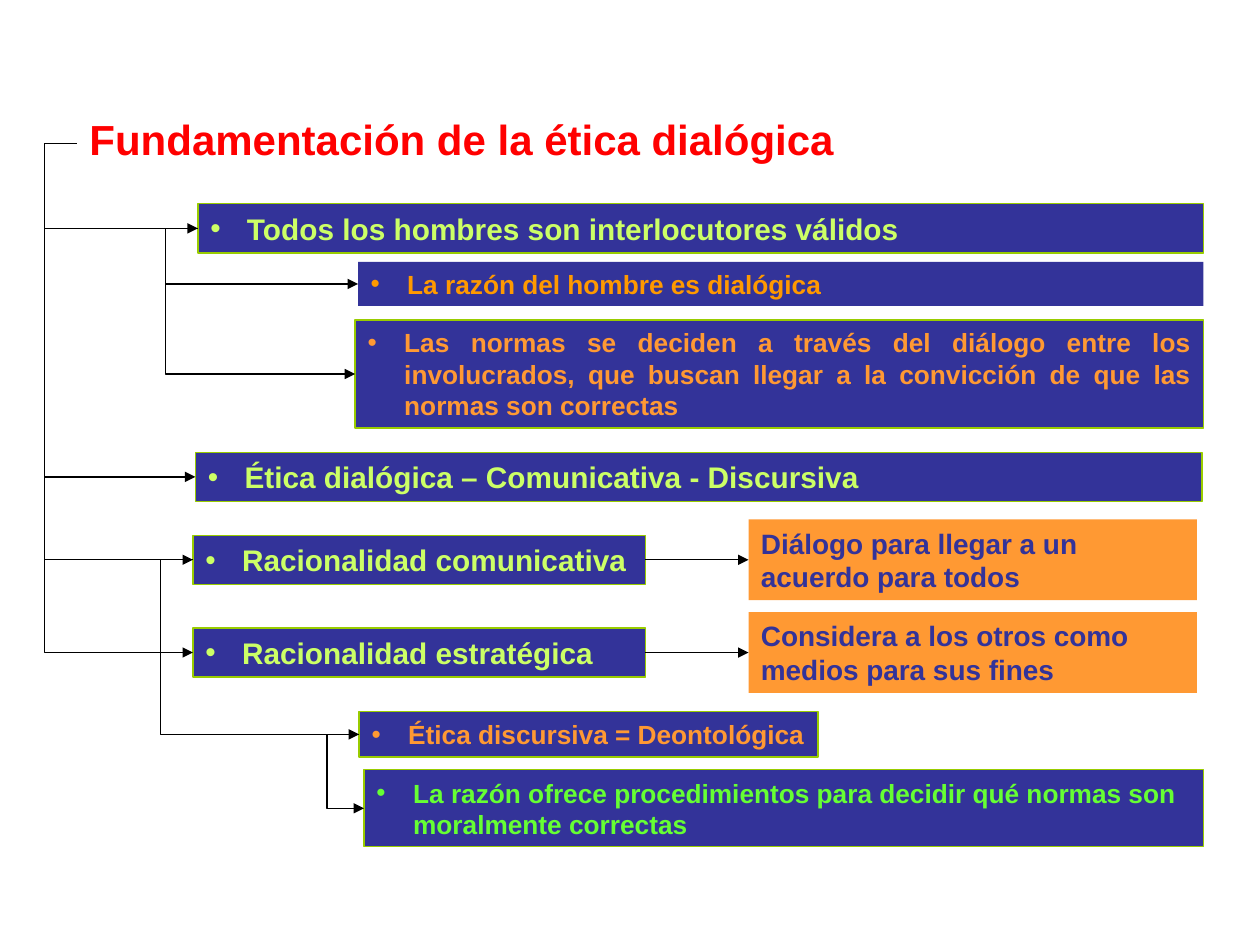
import pptx
import pptx.dml.color
import pptx.enum.shapes
import pptx.enum.text
import pptx.oxml.ns
import pptx.util
from lxml import etree

Cm = pptx.util.Cm
Pt = pptx.util.Pt
Align = pptx.enum.text.PP_ALIGN
Connector = pptx.enum.shapes.MSO_CONNECTOR
qn = pptx.oxml.ns.qn

COLORS = {
    "title": "FF0000",
    "navy": "333399",
    "border": "99CC00",
    "lime": "CCFF66",
    "orange": "FF9933",
    "amber": "FF9900",
    "green": "66FF33",
    "black": "000000",
}
BRANCH_GAP = Cm(0.65)
BULLET_INDENT = Cm(0.74)
MAIN_HEIGHT = 0.99


def rgb(name):
    return pptx.dml.color.RGBColor.from_string(COLORS[name])


def write_text(shape, text, size, color, align=Align.LEFT):
    frame = shape.text_frame
    frame.word_wrap = True
    frame.auto_size = pptx.enum.text.MSO_AUTO_SIZE.NONE
    frame.vertical_anchor = pptx.enum.text.MSO_ANCHOR.MIDDLE
    paragraph = frame.paragraphs[0]
    paragraph.alignment = align
    run = paragraph.add_run()
    run.text = text
    run.font.name = "Arial"
    run.font.size = Pt(size)
    run.font.bold = True
    run.font.color.rgb = rgb(color)
    return paragraph


def add_bullet(paragraph):
    properties = paragraph._p.get_or_add_pPr()
    properties.set("marL", str(BULLET_INDENT))
    properties.set("indent", str(-BULLET_INDENT))
    etree.SubElement(properties, qn("a:buFont")).set("typeface", "Arial")
    etree.SubElement(properties, qn("a:buChar")).set("char", "•")


def add_box(slide, box, text, size, color, fill="navy", border=True,
            bullet=True, align=Align.LEFT):
    shape = slide.shapes.add_shape(
        pptx.enum.shapes.MSO_SHAPE.RECTANGLE, *(Cm(length) for length in box))
    shape.shadow.inherit = False
    shape.fill.solid()
    shape.fill.fore_color.rgb = rgb(fill)
    if border:
        shape.line.color.rgb = rgb("border")
        shape.line.width = Pt(0.75)
    else:
        shape.line.fill.background()
    paragraph = write_text(shape, text, size, color, align)
    if bullet:
        add_bullet(paragraph)
    return shape


def middle(shape):
    return shape.top + shape.height // 2


def add_arrow(slide, kind, start, end):
    connector = slide.shapes.add_connector(kind, *start, *end)
    connector.line.color.rgb = rgb("black")
    connector.line.width = Pt(0.75)
    line = connector.line._get_or_add_ln()
    etree.SubElement(line, qn("a:tailEnd")).set("type", "triangle")
    etree.SubElement(connector._element.spPr, qn("a:effectLst"))
    return connector


def add_branch(slide, parent, child):
    connector = add_arrow(slide, Connector.ELBOW,
                          (parent.left, middle(parent)), (child.left, middle(child)))
    ratio = -BRANCH_GAP / (child.left - parent.left)
    geometry = connector._element.spPr.find(qn("a:prstGeom"))
    guide = etree.SubElement(geometry.find(qn("a:avLst")), qn("a:gd"))
    guide.set("name", "adj1")
    guide.set("fmla", f"val {round(ratio * 100000)}")


def place_title(slide, box):
    title = slide.shapes.title
    title.left, title.top, title.width, title.height = (Cm(length) for length in box)
    paragraph = write_text(title, "Fundamentación de la ética dialógica", 24, "title")
    paragraph.line_spacing = 0.8
    return title


def add_interlocutors(slide, box):
    left, top, width, height = box
    head = add_box(slide, (left, top, width, MAIN_HEIGHT),
                   "Todos los hombres son interlocutores válidos", 17, "lime")
    reason = add_box(slide, (left + 3.23, top + 1.17, width - 3.23, 0.89),
                     "La razón del hombre es dialógica", 15, "amber", border=False)
    norms = add_box(slide, (left + 3.17, top + 2.34, width - 3.17, height - 2.34),
                    "Las normas se deciden a través del diálogo entre los "
                    "involucrados, que buscan llegar a la convicción de que las "
                    "normas son correctas", 15, "orange", align=Align.JUSTIFY)
    for child in (reason, norms):
        add_branch(slide, head, child)
    return head


def add_rationality(slide, box, name, meaning):
    left, top, width, height = box
    head = add_box(slide, (left, top + (height - MAIN_HEIGHT) / 2, 9.12, MAIN_HEIGHT),
                   name, 17, "lime")
    note = add_box(slide, (left + 11.2, top, width - 11.2, height), meaning, 16, "navy",
                   fill="orange", border=False, bullet=False)
    add_arrow(slide, Connector.STRAIGHT,
              (head.left + head.width, middle(head)), (note.left, middle(note)))
    return head


def add_deontology(slide, box, parent):
    left, top, width, height = box
    ethics = add_box(slide, (left, top, 9.25, 0.91),
                     "Ética discursiva = Deontológica", 15, "orange")
    procedures = add_box(slide, (left + 0.1, top + 1.17, width - 0.1, height - 1.17),
                         "La razón ofrece procedimientos para decidir qué normas son "
                         "moralmente correctas", 15, "green")
    add_branch(slide, parent, ethics)
    add_branch(slide, ethics, procedures)


def main():
    presentation = pptx.Presentation()
    presentation.slide_width = Cm(25.4)
    presentation.slide_height = Cm(19.05)
    slide = presentation.slides.add_slide(presentation.slide_layouts[5])

    title = place_title(slide, (1.55, 2.31, 18.75, 1.17))
    interlocutors = add_interlocutors(slide, (3.99, 4.11, 20.27, 4.52))
    discursive = add_box(slide, (3.94, 9.12, 20.29, MAIN_HEIGHT),
                         "Ética dialógica – Comunicativa - Discursiva", 17, "lime")
    communicative = add_rationality(
        slide, (3.89, 10.47, 20.24, 1.63), "Racionalidad comunicativa",
        "Diálogo para llegar a un acuerdo para todos")
    strategic = add_rationality(
        slide, (3.89, 12.34, 20.24, 1.63), "Racionalidad estratégica",
        "Considera a los otros como medios para sus fines")
    add_deontology(slide, (7.24, 14.35, 17.02, 2.72), communicative)
    for child in (interlocutors, discursive, communicative, strategic):
        add_branch(slide, title, child)

    presentation.save("out.pptx")


if __name__ == "__main__":
    main()
